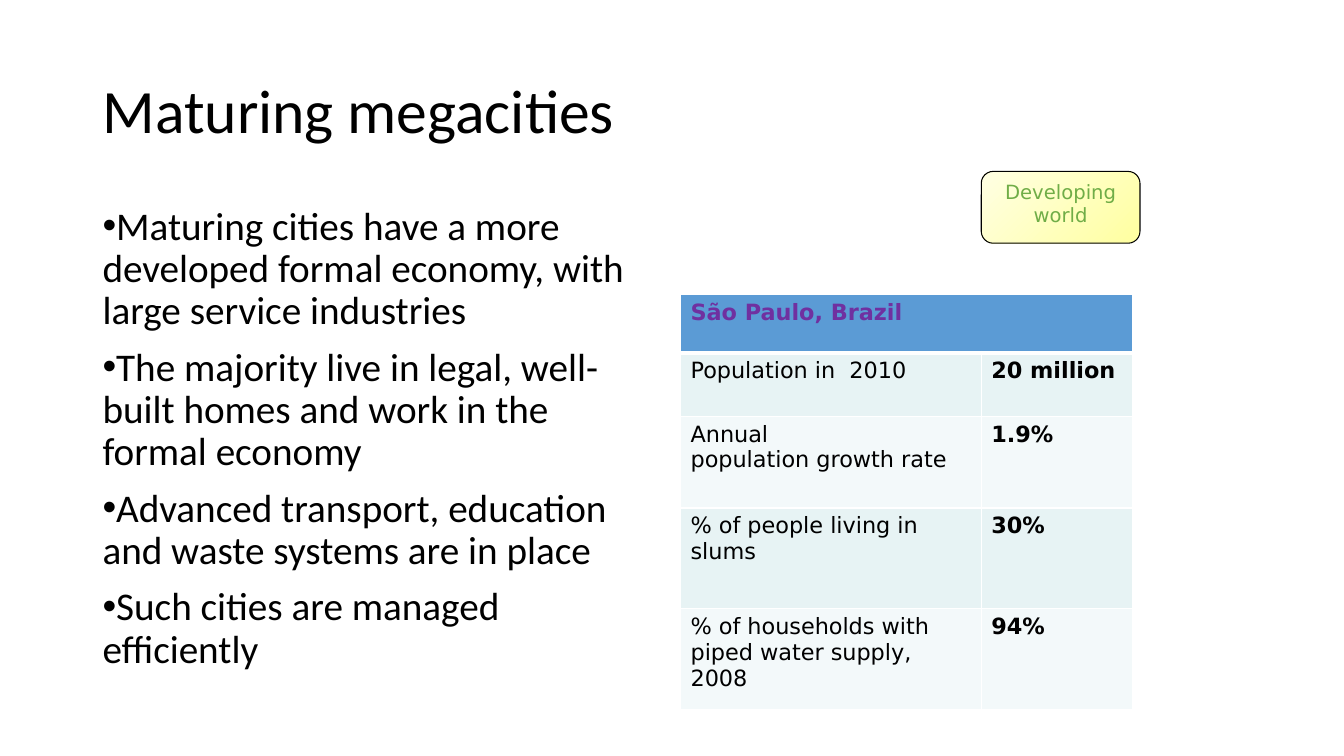
from lxml.etree import SubElement
from pptx import Presentation
from pptx.dml.color import RGBColor
from pptx.enum.shapes import MSO_SHAPE
from pptx.enum.text import MSO_ANCHOR, MSO_AUTO_SIZE, PP_ALIGN
from pptx.oxml.ns import qn
from pptx.util import Cm, Pt

HEADING_FONT = "Calibri"
LABEL_FONT = "DejaVu Sans"
BLACK, WHITE = "000000", "FFFFFF"
HEADER_FILL = "5B9BD5"
BAND_FILLS = ("F3F9FA", "E7F3F4")

POINTS = (
    "Maturing cities have a more developed formal economy, with large service industries",
    "The majority live in legal, well-built homes and work in the formal economy",
    "Advanced transport, education and waste systems are in place",
    "Such cities are managed efficiently",
)
CITY = "São Paulo, Brazil"
FACTS = (
    ("Population in  2010", "20 million"),
    ("Annual\npopulation growth rate", "1.9%"),
    ("% of people living in slums", "30%"),
    ("% of households with piped water supply, 2008", "94%"),
)
COLUMN_WIDTHS = (7.58, 3.8)
ROW_HEIGHTS = (1.47, 1.6, 2.31, 2.54, 2.54)


def rgb(hex_colour):
    return RGBColor.from_string(hex_colour)


def style_runs(paragraph, size, font_name, colour, bold=False):
    for run in paragraph.runs:
        font = run.font
        font.size = Pt(size)
        font.name = font_name
        font.bold = bold
        font.color.rgb = rgb(colour)


def place(shape, left, top, width, height):
    shape.left, shape.top = Cm(left), Cm(top)
    shape.width, shape.height = Cm(width), Cm(height)


def add_title(slide):
    title = slide.shapes.title
    place(title, 2.33, 1.01, 29.21, 3.68)
    frame = title.text_frame
    frame.text = "Maturing megacities"
    frame.auto_size = MSO_AUTO_SIZE.NONE
    frame.vertical_anchor = MSO_ANCHOR.MIDDLE
    heading = frame.paragraphs[0]
    heading.alignment = PP_ALIGN.LEFT
    heading.line_spacing = 0.9
    style_runs(heading, 44, HEADING_FONT, BLACK)


def set_flush_bullet(paragraph):
    """Bullet with no hanging indent, so wrapped lines start under it."""
    properties = paragraph._p.get_or_add_pPr()
    properties.set("marL", "0")
    properties.set("indent", "0")
    SubElement(properties, qn("a:buFont"), typeface="Arial")
    SubElement(properties, qn("a:buChar"), char="•")


def add_points(slide):
    body = slide.placeholders[1]
    place(body, 2.33, 5.07, 14.4, 12.09)
    frame = body.text_frame
    frame.text = "\n".join(POINTS)
    frame.auto_size = MSO_AUTO_SIZE.NONE
    for point in frame.paragraphs:
        point.line_spacing = 0.9
        point.space_before = Pt(10)
        set_flush_bullet(point)
        style_runs(point, 28, HEADING_FONT, BLACK)


def add_world_badge(slide):
    badge = slide.shapes.add_shape(
        MSO_SHAPE.ROUNDED_RECTANGLE, Cm(24.73), Cm(4.32), Cm(4), Cm(1.81))
    badge.shadow.inherit = False
    badge.fill.gradient()
    badge.fill.gradient_angle = 135
    for stop, colour in zip(badge.fill.gradient_stops, ("FFFFA0", "FFFFE3")):
        stop.color.rgb = rgb(colour)
    badge.line.color.rgb = rgb(BLACK)
    badge.line.width = Pt(0.75)
    frame = badge.text_frame
    frame.word_wrap = True
    frame.vertical_anchor = MSO_ANCHOR.TOP
    frame.text = "Developing world"
    label = frame.paragraphs[0]
    label.alignment = PP_ALIGN.CENTER
    style_runs(label, 14, LABEL_FONT, "70AD47")


def set_borders(cell, top, bottom):
    """White borders, one point at the sides; call before filling the cell."""
    properties = cell._tc.get_or_add_tcPr()
    for side, width in (("L", 1), ("R", 1), ("T", top), ("B", bottom)):
        line = SubElement(properties, qn(f"a:ln{side}"), w=str(Pt(width)))
        fill = SubElement(line, qn("a:solidFill"))
        SubElement(fill, qn("a:srgbClr"), val=WHITE)


def fill_cell(cell, text, row, colour, bold):
    set_borders(cell, 3 if row == 1 else 1, 3 if row == 0 else 1)
    cell.fill.solid()
    cell.fill.fore_color.rgb = rgb(BAND_FILLS[row % 2] if row else HEADER_FILL)
    cell.text_frame.text = text
    for paragraph in cell.text_frame.paragraphs:
        style_runs(paragraph, 16, LABEL_FONT, colour, bold)


def add_city_table(slide):
    table = slide.shapes.add_table(
        len(ROW_HEIGHTS), len(COLUMN_WIDTHS), Cm(17.15), Cm(7.42),
        Cm(sum(COLUMN_WIDTHS)), Cm(sum(ROW_HEIGHTS))).table
    for column, width in zip(table.columns, COLUMN_WIDTHS):
        column.width = Cm(width)
    for row, height in zip(table.rows, ROW_HEIGHTS):
        row.height = Cm(height)
    table.cell(0, 0).merge(table.cell(0, 1))
    fill_cell(table.cell(0, 0), CITY, 0, "7030A0", True)
    for row, (measure, value) in enumerate(FACTS, start=1):
        fill_cell(table.cell(row, 0), measure, row, BLACK, False)
        fill_cell(table.cell(row, 1), value, row, BLACK, True)


def main():
    deck = Presentation()
    deck.slide_width, deck.slide_height = Cm(33.87), Cm(19.05)
    slide = deck.slides.add_slide(deck.slide_layouts[1])
    add_title(slide)
    add_points(slide)
    add_world_badge(slide)
    add_city_table(slide)
    deck.save("out.pptx")


if __name__ == "__main__":
    main()
